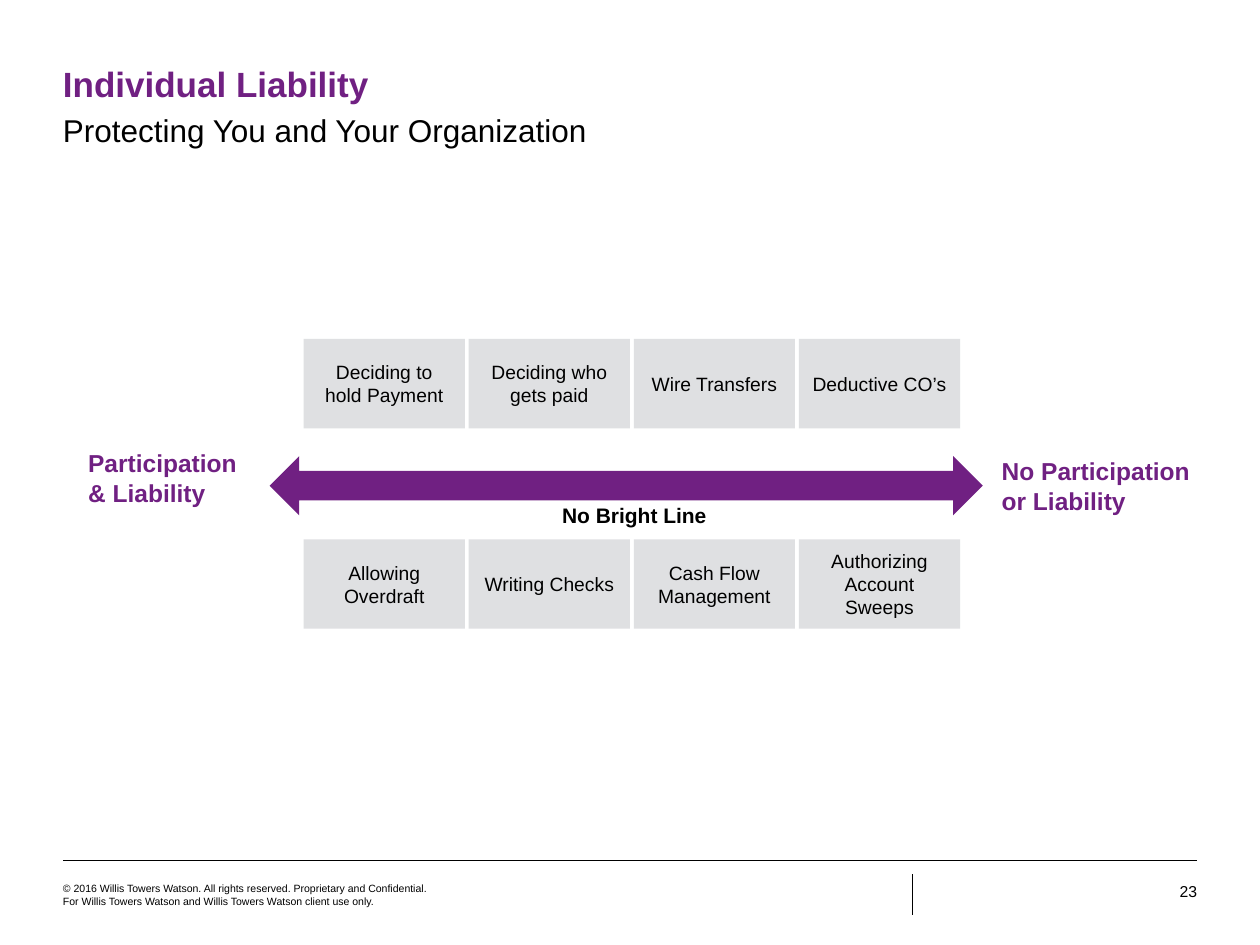
"""Build the Individual Liability slide."""
import pptx
import pptx.dml.color
import pptx.enum.shapes
import pptx.enum.text
import pptx.oxml.ns
import pptx.util

Inches = pptx.util.Inches
Align = pptx.enum.text.PP_ALIGN
Shape = pptx.enum.shapes.MSO_SHAPE

COLORS = {"purple": "702082", "grey": "DFE0E2", "black": "000000"}


class Painter:
    """Hold the style and the current page, and draw each kind of element."""

    font_name = "Arial"

    def __init__(self, page):
        self.page = page

    def color(self, name):
        return pptx.dml.color.RGBColor.from_string(COLORS[name])

    def fill_frame(self, frame, text, size, color="black", bold=False, align=Align.LEFT, after=0, inset=0):
        frame.word_wrap = True
        frame.margin_left = frame.margin_right = Inches(inset)
        frame.margin_top = frame.margin_bottom = Inches(inset)
        para = frame.paragraphs[0]
        para.text = text
        para.alignment = align
        para.space_after = pptx.util.Pt(after)
        para.font.name = self.font_name
        para.font.size = pptx.util.Pt(size)
        para.font.bold = bold
        para.font.color.rgb = self.color(color)

    def label(self, left, top, width, height, text, size, **style):
        box = self.page.shapes.add_textbox(*map(Inches, (left, top, width, height)))
        self.fill_frame(box.text_frame, text, size, **style)

    def shape(self, kind, left, top, width, height, fill):
        shape = self.page.shapes.add_shape(kind, *map(Inches, (left, top, width, height)))
        shape.shadow.inherit = False
        shape.fill.solid()
        shape.fill.fore_color.rgb = self.color(fill)
        shape.line.fill.background()
        return shape

    def card(self, left, top, width, height, text):
        card = self.shape(Shape.RECTANGLE, left, top, width, height, "grey")
        card.text_frame.vertical_anchor = pptx.enum.text.MSO_ANCHOR.MIDDLE
        self.fill_frame(card.text_frame, text, 11, align=Align.CENTER, inset=0.1)

    def rule(self, x1, y1, x2, y2, weight):
        straight = pptx.enum.shapes.MSO_CONNECTOR.STRAIGHT
        rule = self.page.shapes.add_connector(straight, *map(Inches, (x1, y1, x2, y2)))
        rule.line.color.rgb = self.color("black")
        rule.line.width = pptx.util.Pt(weight)
        properties = rule._element.spPr
        properties.append(properties.makeelement(pptx.oxml.ns.qn("a:effectLst"), {}))


def main():
    deck = pptx.Presentation()
    deck.slide_width, deck.slide_height = Inches(10), Inches(7.5)
    painter = Painter(deck.slides.add_slide(deck.slide_layouts[6]))

    painter.rule(0.5, 6.83, 9.5, 6.83, 0.25)
    painter.rule(7.24, 6.94, 7.24, 7.26, 0.75)
    painter.label(0.5, 0.5, 9, 0.34, "Individual Liability", 20, color="purple", bold=True)
    painter.label(0.5, 0.88, 9, 0.3, "Protecting You and Your Organization", 18, after=3.5)
    painter.label(0.5, 7, 2.96, 0.27,
                  "© 2016 Willis Towers Watson. All rights reserved. Proprietary and Confidential. "
                  "For Willis Towers Watson and Willis Towers Watson client use only.", 6)
    painter.label(9.08, 7, 0.42, 0.15, "23", 9, align=Align.RIGHT)

    end_style = {"size": 14, "color": "purple", "bold": True, "after": 3.5}
    painter.label(0.7, 3.56, 1.36, 0.57, "Participation & Liability", **end_style)
    painter.label(7.95, 3.62, 1.56, 0.57, "No Participation or Liability", **end_style)
    painter.shape(Shape.LEFT_RIGHT_ARROW, 2.14, 3.62, 5.66, 0.47, "purple")
    painter.label(4.42, 3.99, 1.23, 0.29, "No Bright Line", 12, bold=True, align=Align.CENTER, after=3.5)

    rows = {
        2.69: ["Deciding to hold Payment", "Deciding who gets paid", "Wire Transfers", "Deductive CO’s"],
        4.28: ["Allowing Overdraft", "Writing Checks", "Cash Flow Management", "Authorizing Account Sweeps"],
    }
    for top, names in rows.items():
        for column, name in enumerate(names):
            painter.card(2.41 + 1.31 * column, top, 1.28, 0.71, name)

    deck.save("out.pptx")


if __name__ == "__main__":
    main()
